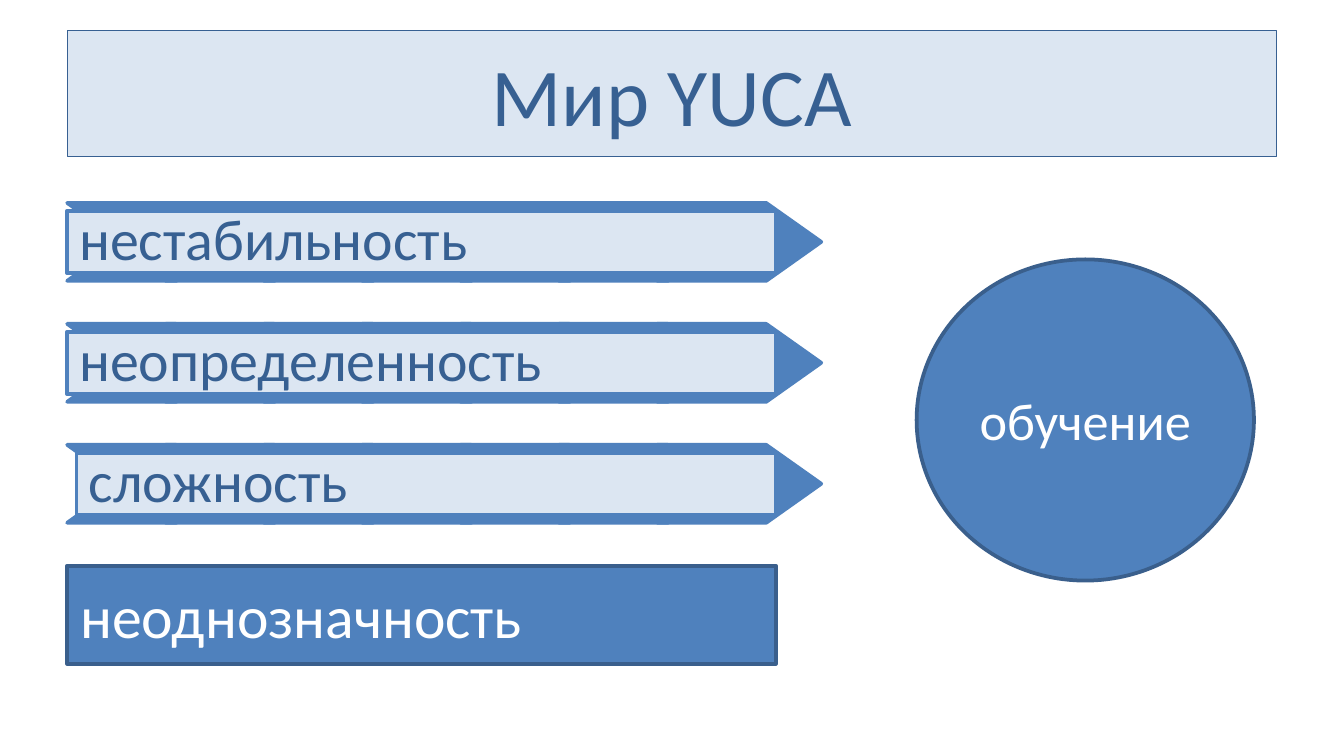
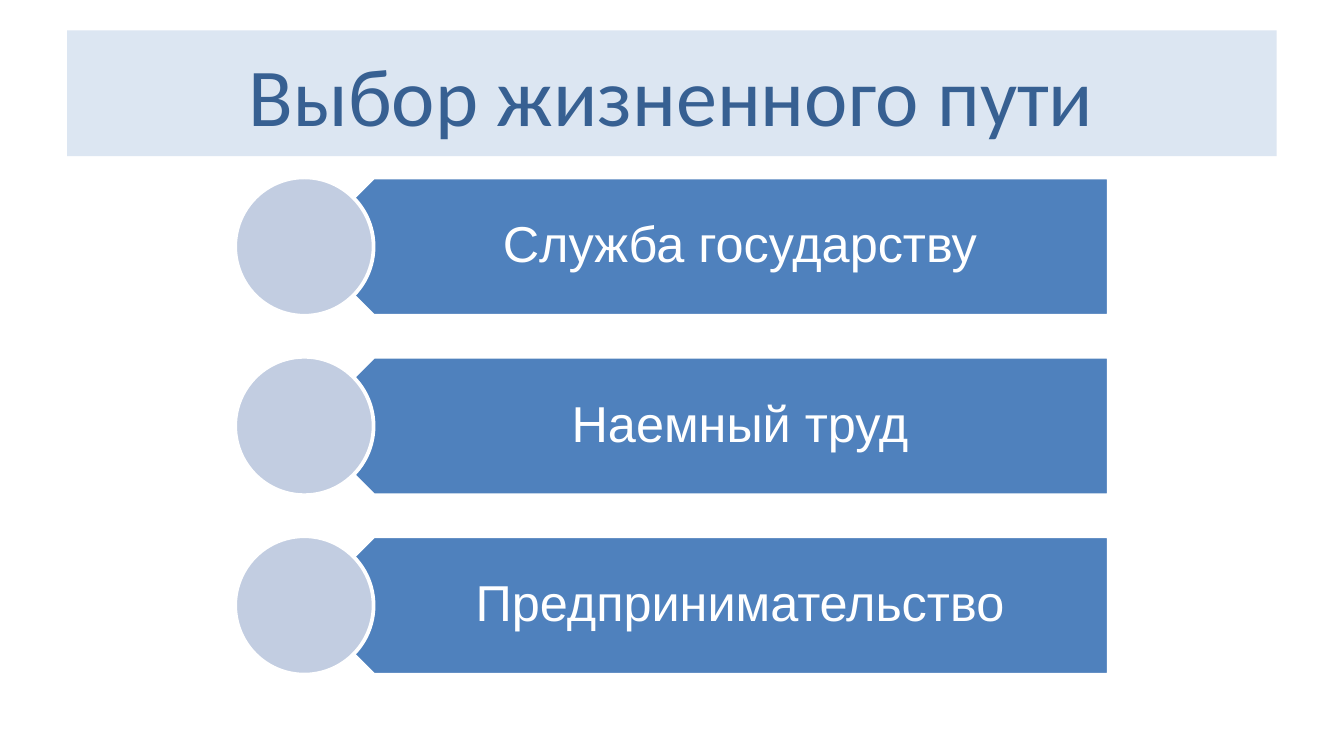
import pptx
import pptx.dml.color
import pptx.enum.shapes
import pptx.enum.text
import pptx.util
from dataclasses import dataclass

COLORS = {
    "pale": "DCE6F2",
    "navy": "376092",
    "blue": "4F81BD",
    "edge": "3A5F8C",
    "mist": "C2CDE1",
    "white": "FFFFFF",
}
SHAPES = pptx.enum.shapes.MSO_SHAPE
ALIGN = pptx.enum.text.PP_ALIGN
SLIDE_WIDTH = 10
SLIDE_HEIGHT = SLIDE_WIDTH * 9 / 16

# Text formats: font, paragraph and margin values
TITLE_TEXT = {"font": {"name": "Calibri", "size": 44}, "color": "navy",
              "paragraph": {"alignment": ALIGN.CENTER}, "margins": (0.1, 0.05, 0.1, 0.05)}
CIRCLE_TEXT = {**TITLE_TEXT, "font": {"name": "Calibri", "size": 28}, "color": "white"}
LAST_TEXT = {**CIRCLE_TEXT, "font": {"name": "Calibri", "size": 32},
             "paragraph": {"alignment": ALIGN.LEFT}}
ARROW_TEXT = {"font": {"name": "Calibri", "size": 31}, "color": "navy",
              "paragraph": {"alignment": ALIGN.LEFT, "line_spacing": 0.9,
                            "space_after": pptx.util.Pt(10.9)},
              "margins": (0.09, 0.09, 0.09, 0.09)}
PATH_TEXT = {"font": {"name": "Arial", "size": 27}, "color": "white",
             "paragraph": {"alignment": ALIGN.CENTER, "line_spacing": 0.9,
                           "space_after": pptx.util.Pt(9.5)},
             "margins": (0.45, 0.11, 0.21, 0.11)}


@dataclass
class Box:
    left: float
    top: float
    width: float
    height: float

    def row(self, index, pitch, height):
        """Return the full-width row at the given index."""
        return Box(self.left, self.top + index * pitch, self.width, height)

    def lengths(self):
        return [pptx.util.Inches(value)
                for value in (self.left, self.top, self.width, self.height)]


TITLE_BOX = Box(0.05 * SLIDE_WIDTH, 0.04 * SLIDE_HEIGHT,
                0.9 * SLIDE_WIDTH, SLIDE_HEIGHT / 6)


def rgb(name):
    return pptx.dml.color.RGBColor.from_string(COLORS[name])


def paint(shape, fill, line=None, width=2):
    shape.fill.solid()
    shape.fill.fore_color.rgb = rgb(fill)
    if line:
        shape.line.color.rgb = rgb(line)
        shape.line.width = pptx.util.Pt(width)
    else:
        shape.line.fill.background()


def write(shape, text, style):
    frame = shape.text_frame
    frame.text = text
    sides = ("margin_left", "margin_top", "margin_right", "margin_bottom")
    settings = {
        "word_wrap": True,
        "auto_size": pptx.enum.text.MSO_AUTO_SIZE.NONE,
        "vertical_anchor": pptx.enum.text.MSO_ANCHOR.MIDDLE,
        **dict(zip(sides, map(pptx.util.Inches, style["margins"]))),
    }
    for name, value in settings.items():
        setattr(frame, name, value)
    para = frame.paragraphs[0]
    for name, value in style["paragraph"].items():
        setattr(para, name, value)
    span = para.runs[0]
    span.font.name = style["font"]["name"]
    span.font.size = pptx.util.Pt(style["font"]["size"])
    span.font.color.rgb = rgb(style["color"])


def add_shape(parent, kind, box, fill, line):
    shape = parent.shapes.add_shape(kind, *box.lengths())
    shape.shadow.inherit = False
    paint(shape, fill, line)
    return shape


def add_page(deck, title, line=None):
    """Add a page with the shared title band."""
    page = deck.slides.add_slide(deck.slide_layouts[5])
    band = page.shapes.title
    band.left, band.top, band.width, band.height = TITLE_BOX.lengths()
    paint(band, "pale", line, 0.75)
    write(band, title, TITLE_TEXT)
    return page


def add_arrow(page, box, text, indent=0):
    """Draw a chain of chevrons with a label strip across it."""
    group = page.shapes.add_group_shape()
    chevron_width, count = 1.22, 7
    step = (box.width - chevron_width) / (count - 1)
    for index in range(count):
        place = Box(box.left + index * step, box.top, chevron_width, box.height)
        chevron = add_shape(group, SHAPES.CHEVRON, place, "blue", "blue")
        chevron.adjustments[0] = 0.706
    strip = Box(box.left + indent, box.top + 0.1 * box.height,
                0.94 * box.width - indent, 0.8 * box.height)
    write(add_shape(group, SHAPES.RECTANGLE, strip, "pale", "blue"), text, ARROW_TEXT)


def add_challenges(page, box):
    """Stack the arrows and close with a solid bar."""
    pitch = 0.9
    arrows = [("нестабильность", 0), ("неопределенность", 0), ("сложность", 0.07)]
    for index, (text, indent) in enumerate(arrows):
        add_arrow(page, box.row(index, pitch, 0.58), text, indent)
    place = box.row(len(arrows), pitch, 0.73)
    place.width *= 0.94
    write(add_shape(page, SHAPES.RECTANGLE, place, "blue", "edge"),
          "неоднозначность", LAST_TEXT)


def add_paths(page, box, names):
    """Draw one row per path: pentagon, label and circle."""
    size = 1.03
    pitch = (box.height - size) / (len(names) - 1)
    for index, name in enumerate(names):
        row = box.row(index, pitch, size)
        right = row.left + row.width
        group = page.shapes.add_group_shape()
        plate = Box(row.left + size / 2, row.top, row.width - size / 2, size)
        add_shape(group, SHAPES.PENTAGON, plate, "blue", "white").rotation = 180
        label = Box(row.left + 0.75 * size, row.top, 0, size)
        label.width = right - label.left
        write(group.shapes.add_textbox(*label.lengths()), name, PATH_TEXT)
        circle = Box(row.left, row.top, size, size)
        add_shape(group, SHAPES.OVAL, circle, "mist", "white")


def main():
    deck = pptx.Presentation()
    deck.slide_width = pptx.util.Inches(SLIDE_WIDTH)
    deck.slide_height = pptx.util.Inches(SLIDE_HEIGHT)

    # Challenges and the answer to them
    page = add_page(deck, "Мир YUCA", "navy")
    circle = add_shape(page, SHAPES.OVAL, Box(6.82, 1.93, 2.51, 2.39), "blue", "edge")
    write(circle, "обучение", CIRCLE_TEXT)
    add_challenges(page, Box(TITLE_BOX.left, 1.51, 5.61, 3.43))

    # Three paths in life
    page = add_page(deck, "Выбор жизненного пути")
    add_paths(page, Box(1.75, 1.32, 6.5, 3.7),
              ["Служба государству", "Наемный труд", "Предпринимательство"])
    deck.save("out.pptx")


if __name__ == "__main__":
    main()
